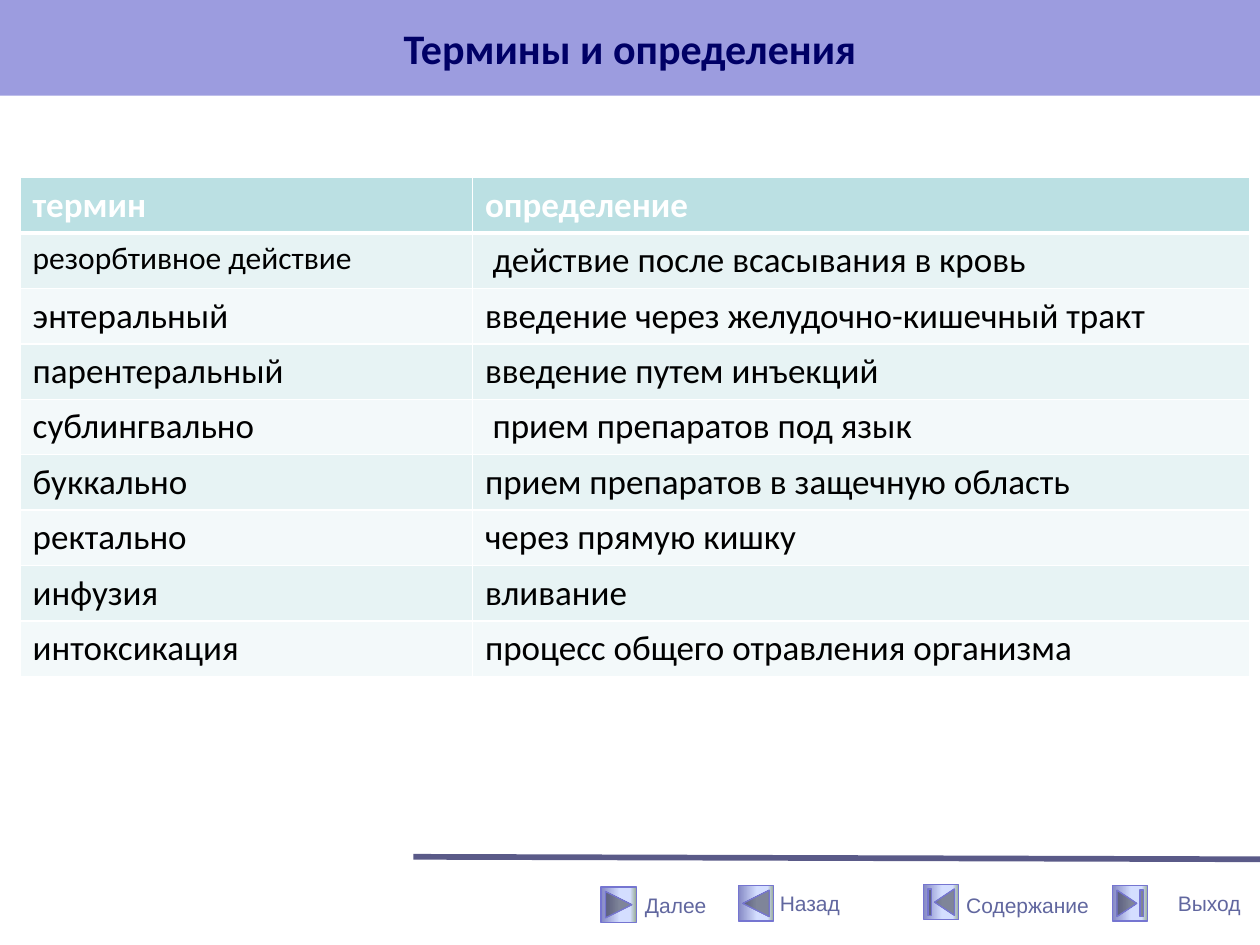
import pptx
import pptx.util
import pptx.dml.color
import pptx.enum.shapes
import pptx.enum.text
import pptx.oxml.ns
import lxml.etree

Inches, Pt = pptx.util.Inches, pptx.util.Pt
Kind = pptx.enum.shapes.MSO_SHAPE
Anchor = pptx.enum.text.MSO_ANCHOR
Align = pptx.enum.text.PP_ALIGN
qn = pptx.oxml.ns.qn

COLORS = {
    "band": "9C9CDF", "title": "000066", "nav": "61679F", "rule": "5A5A88",
    "edge": "7575D1", "white": "FFFFFF", "black": "000000",
    "head": "BBE0E3", "odd": "E7F3F4", "even": "F3F9FA",
}
STOPS = [(0, "8488C4"), (53, "D4DEFF"), (83, "D4DEFF"), (100, "96AB94")]

TERMS = [
    ("термин", "определение"),
    ("резорбтивное действие", "действие после всасывания в кровь"),
    ("энтеральный", "введение через желудочно-кишечный тракт"),
    ("парентеральный", "введение путем инъекций"),
    ("сублингвально", "прием препаратов под язык"),
    ("буккально", "прием препаратов в защечную область"),
    ("ректально", "через прямую кишку"),
    ("инфузия", "вливание"),
    ("интоксикация", "процесс общего отравления организма"),
]
INDENTED = {(1, 1), (4, 1)}
SMALL = (1, 0)

# action button, its left and top, label, label left, top, width and height
NAV = [
    (Kind.ACTION_BUTTON_END, 8.83, 7.03, "Выход", 9.25, 6.92, 0.75, 0.5),
    (Kind.ACTION_BUTTON_BEGINNING, 7.33, 7.02, "Содержание", 7.57, 7.03, 1.18, 0.3),
    (Kind.ACTION_BUTTON_FORWARD_OR_NEXT, 4.77, 7.04, "Далее", 5.02, 7.03, 0.69, 0.3),
    (Kind.ACTION_BUTTON_BACK_OR_PREVIOUS, 5.86, 7.03, "Назад", 6.09, 7.02, 0.68, 0.3),
]


def color(name):
    return pptx.dml.color.RGBColor.from_string(COLORS[name])


class Deck:
    """Holds the slide and the style shared by its elements."""

    def __init__(self, slide, face="Calibri", small="Arial"):
        self.slide, self.face, self.small = slide, face, small

    def letter(self, frame, text, size, tone, face, bold=False):
        """Set the text of a frame and format its runs."""
        frame.text = text
        for run in frame.paragraphs[0].runs:
            font = run.font
            font.name, font.size, font.bold = face, Pt(size), bold
            font.color.rgb = color(tone)

    def title(self, text, *box):
        shape = self.slide.shapes.add_shape(Kind.RECTANGLE, *map(Inches, box))
        shape.shadow.inherit = False
        shape.fill.solid()
        shape.fill.fore_color.rgb = color("band")
        shape.line.fill.background()
        frame = shape.text_frame
        frame.vertical_anchor = Anchor.MIDDLE
        self.letter(frame, text, 24, "title", self.face, True)
        frame.paragraphs[0].alignment = Align.CENTER

    def button(self, kind, left, top, side=0.28):
        shape = self.slide.shapes.add_shape(
            kind, Inches(left), Inches(top), Inches(side), Inches(side))
        shape.shadow.inherit = False
        shape.line.color.rgb = color("edge")
        shape.line.width = Pt(0.75)
        shape.fill.gradient()
        shape.fill.gradient_angle = 0
        stops = shape._element.spPr.find(qn("a:gradFill")).find(qn("a:gsLst"))
        for old in list(stops):
            stops.remove(old)
        for place, tone in STOPS:
            stop = lxml.etree.SubElement(stops, qn("a:gs"), pos=str(place * 1000))
            lxml.etree.SubElement(stop, qn("a:srgbClr"), val=tone)

    def label(self, text, *box):
        frame = self.slide.shapes.add_textbox(*map(Inches, box)).text_frame
        frame.word_wrap = False
        frame.vertical_anchor = Anchor.MIDDLE
        self.letter(frame, text, 12, "nav", self.small)

    def rule(self, *ends):
        line = self.slide.shapes.add_connector(
            pptx.enum.shapes.MSO_CONNECTOR.STRAIGHT, *map(Inches, ends))
        line.line.color.rgb = color("rule")
        line.line.width = Pt(3.25)
        lxml.etree.SubElement(line._element.spPr, qn("a:effectLst"))

    def border(self, cell, sides):
        """Draw white borders before the fill, as the schema orders them."""
        props = cell._tc.get_or_add_tcPr()
        for side, width in sides.items():
            edge = lxml.etree.SubElement(
                props, qn("a:ln" + side), w=str(Pt(width)))
            fill = lxml.etree.SubElement(edge, qn("a:solidFill"))
            lxml.etree.SubElement(fill, qn("a:srgbClr"), val=COLORS["white"])

    def table(self, rows, left, top, widths, height):
        grid = self.slide.shapes.add_table(
            len(rows), len(widths), Inches(left), Inches(top),
            Inches(sum(widths)), Inches(height * len(rows))).table
        for column, width in zip(grid.columns, widths):
            column.width = Inches(width)
        for r, row in enumerate(rows):
            head = r == 0
            shade = "head" if head else "odd" if r % 2 else "even"
            for c, text in enumerate(row):
                cell = grid.cell(r, c)
                self.border(cell, {"L": 1, "R": 1, "T": 3 if r == 1 else 1,
                                   "B": 3 if head else 1})
                cell.fill.solid()
                cell.fill.fore_color.rgb = color(shade)
                if (r, c) in INDENTED:
                    cell.margin_left = Inches(0.16)
                self.letter(cell.text_frame, text, 18 if (r, c) == SMALL else 20,
                            "white" if head else "black", self.face, head)


def main():
    show = pptx.Presentation()
    show.slide_width, show.slide_height = Inches(10), Inches(7.5)
    deck = Deck(show.slides.add_slide(show.slide_layouts[6]))
    deck.rule(3.28, 6.8, 10, 6.82)
    for kind, left, top, text, *box in NAV:
        deck.button(kind, left, top)
        deck.label(text, *box)
    deck.title("Термины и определения", 0, 0, 10, 0.76)
    deck.table(TERMS, 0.16, 1.41, [3.59, 6.17], 0.44)
    show.save("out.pptx")


if __name__ == "__main__":
    main()
